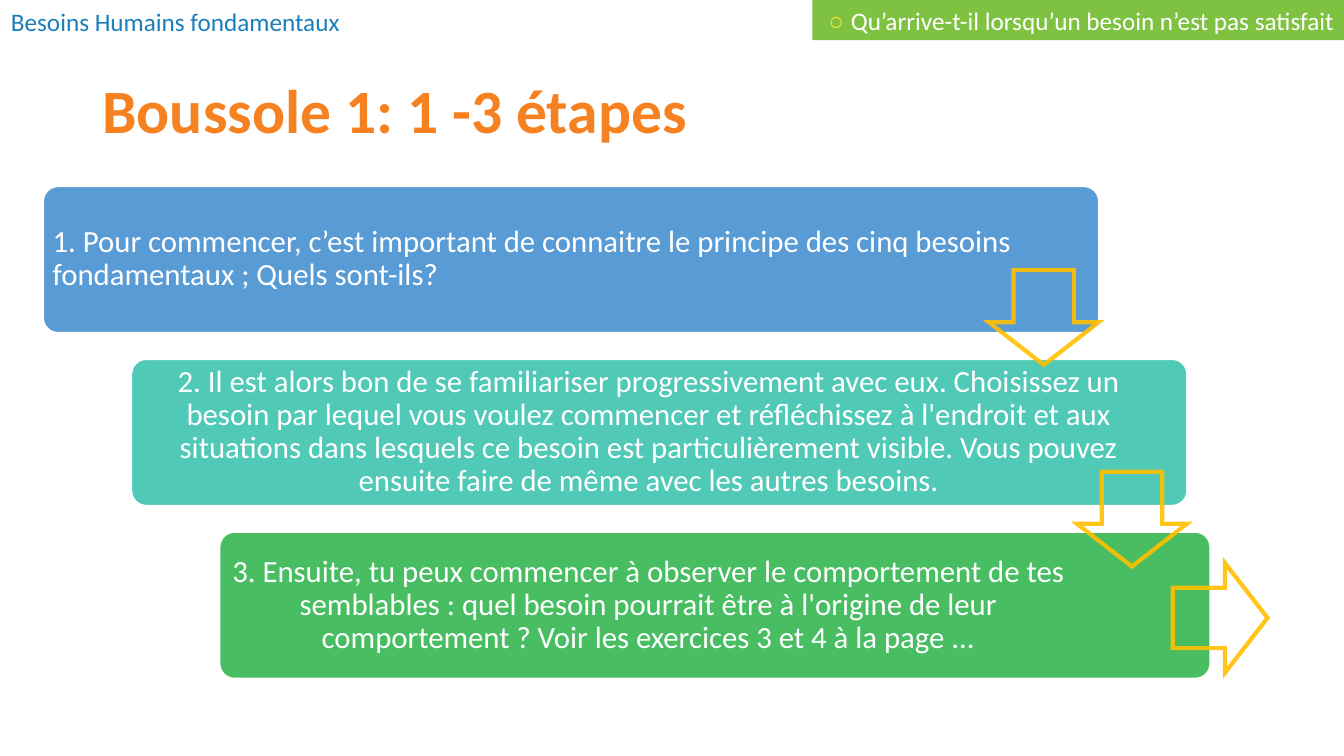
from collections import namedtuple
from dataclasses import dataclass

from lxml import etree
from pptx import Presentation
from pptx import util as u
from pptx.dml.color import RGBColor
from pptx.enum import shapes, text
from pptx.oxml.ns import qn

# Grid of 160 columns by 90 rows over a 13.33 by 7.5 inch slide
WIDTH, HEIGHT = u.Inches(13.33), u.Inches(7.5)
COLUMNS, ROWS = 160, 90
Box = namedtuple("Box", "left top width height")


@dataclass(frozen=True)
class Theme:
    font: str = "Calibri"
    symbol_font: str = "Arial"
    header_size: int = 18
    title_size: int = 44
    step_size: int = 22
    white: str = "FFFFFF"
    blue: str = "1A7EBA"
    orange: str = "F68121"
    green: str = "7FC242"
    yellow: str = "FBE82A"
    arrow: str = "FFC000"
    step_fills: tuple = ("599BD5", "50C9B6", "48BD62")


THEME = Theme()

# Wording, box width, right inset, alignment, arrow drop and arrow rotation
Step = namedtuple("Step", "wording width inset align drop rotation")
STEPS = [
    Step("1. Pour commencer, c’est important de connaitre le principe des cinq "
         "besoins fondamentaux ; Quels sont-ils?",
         125.64, 2.64, text.PP_ALIGN.LEFT, 9.96, 0),
    Step("2. Il est alors bon de se familiariser progressivement avec eux. "
         "Choisissez un besoin par lequel vous voulez commencer et réfléchissez "
         "à l'endroit et aux situations dans lesquels ce besoin est "
         "particulièrement visible. Vous pouvez ensuite faire de même avec les "
         "autres besoins.",
         125.64, 3.12, text.PP_ALIGN.CENTER, 13.38, 0),
    Step("3. Ensuite, tu peux commencer à observer le comportement de tes "
         "semblables : quel besoin pourrait être à l'origine de leur "
         "comportement ? Voir les exercices 3 et 4 à la page ...",
         117.9, 16.44, text.PP_ALIGN.CENTER, 4.56, 270),
]


def cols(count):
    return u.Emu(round(WIDTH * count / COLUMNS))


def rows(count):
    return u.Emu(round(HEIGHT * count / ROWS))


def place(box):
    return cols(box.left), rows(box.top), cols(box.width), rows(box.height)


def colour(value):
    return RGBColor.from_string(value)


def style(font, size, value, bold=False):
    font.name = THEME.font
    font.size = u.Pt(size)
    font.color.rgb = colour(value)
    font.bold = bold


def add_block(slide, kind, box, fill=None):
    block = slide.shapes.add_shape(kind, *place(box))
    block.shadow.inherit = False
    if fill:
        block.fill.solid()
        block.fill.fore_color.rgb = colour(fill)
    else:
        block.fill.background()
    block.line.fill.background()
    block.text_frame.word_wrap = True
    return block


def add_header(slide, box):
    header = add_block(slide, shapes.MSO_SHAPE.RECTANGLE, box, THEME.white)
    section = header.text_frame.paragraphs[0]
    section.text = "Besoins Humains fondamentaux"
    section.alignment = text.PP_ALIGN.LEFT
    style(section.font, THEME.header_size, THEME.blue)


def add_banner(slide, box):
    banner = add_block(slide, shapes.MSO_SHAPE.RECTANGLE, box, THEME.green)
    question = banner.text_frame.paragraphs[0]
    question.alignment = text.PP_ALIGN.RIGHT
    style(question.font, THEME.header_size, THEME.white)
    for wording, font, value in (
            ("○ ", THEME.symbol_font, THEME.yellow),
            ("Qu’arrive-t-il lorsqu’un besoin n’est pas satisfait",
             THEME.font, THEME.white)):
        run = question.add_run()
        run.text = wording
        style(run.font, THEME.header_size, value)
        run.font.name = font


def add_title(slide, box):
    frame = slide.shapes.add_textbox(*place(box)).text_frame
    frame.word_wrap = True
    frame.vertical_anchor = text.MSO_ANCHOR.MIDDLE
    title = frame.paragraphs[0]
    title.text = "Boussole 1: 1 -3 étapes"
    title.line_spacing = 0.9
    style(title.font, THEME.title_size, THEME.orange, bold=True)


def add_step(slide, box, step, fill):
    card = add_block(slide, shapes.MSO_SHAPE.ROUNDED_RECTANGLE, box, fill)
    card.adjustments[0] = 0.1
    card.line.color.rgb = colour(THEME.white)
    card.line.width = u.Pt(1)
    frame = card.text_frame
    frame.vertical_anchor = text.MSO_ANCHOR.MIDDLE
    frame.margin_left = cols(0.6)
    frame.margin_top = frame.margin_bottom = rows(0.6)
    frame.margin_right = cols(step.inset)
    wording = frame.paragraphs[0]
    wording.text = step.wording
    wording.alignment = step.align
    wording.line_spacing = 0.89
    wording.space_after = u.Pt(8)
    style(wording.font, THEME.step_size, THEME.white)


def add_arrow(slide, box, rotation):
    arrow = add_block(slide, shapes.MSO_SHAPE.DOWN_ARROW, box)
    arrow.adjustments[0] = 0.55
    arrow.adjustments[1] = 0.45
    arrow.rotation = rotation
    arrow.line.color.rgb = colour(THEME.arrow)
    arrow.line.width = u.Pt(3)
    # Slight transparency and sharp corners
    outline = arrow.line._get_or_add_ln()
    tint = outline.find(".//" + qn("a:srgbClr"))
    etree.SubElement(tint, qn("a:alpha"), val="90000")
    etree.SubElement(outline, qn("a:miter"), lim="800000")


def add_staircase(slide, box):
    """Three steps going down to the right, then the arrows on top."""
    shift, pitch, step_height = 10.5, 20.58, 17.4
    corners = [(box.left + i * shift, box.top + i * pitch)
               for i in range(len(STEPS))]
    for (left, top), step, fill in zip(corners, STEPS, THEME.step_fills):
        add_step(slide, Box(left, top, step.width, step_height), step, fill)
    for (left, top), step in zip(corners, STEPS):
        add_arrow(slide, Box(left + 112.56, top + step.drop, 13.08, 11.28),
                  step.rotation)


def main():
    deck = Presentation()
    deck.slide_width, deck.slide_height = WIDTH, HEIGHT
    slide = deck.slides.add_slide(deck.slide_layouts[6])
    add_header(slide, Box(0.12, 0.12, 42.6, 4.8))
    add_title(slide, Box(11, 4.8, 138, 17.4))
    add_staircase(slide, Box(5.16, 22.2, 146.64, 58.56))
    add_banner(slide, Box(96.72, 0, 63.28, 4.8))
    deck.save("out.pptx")


if __name__ == "__main__":
    main()
